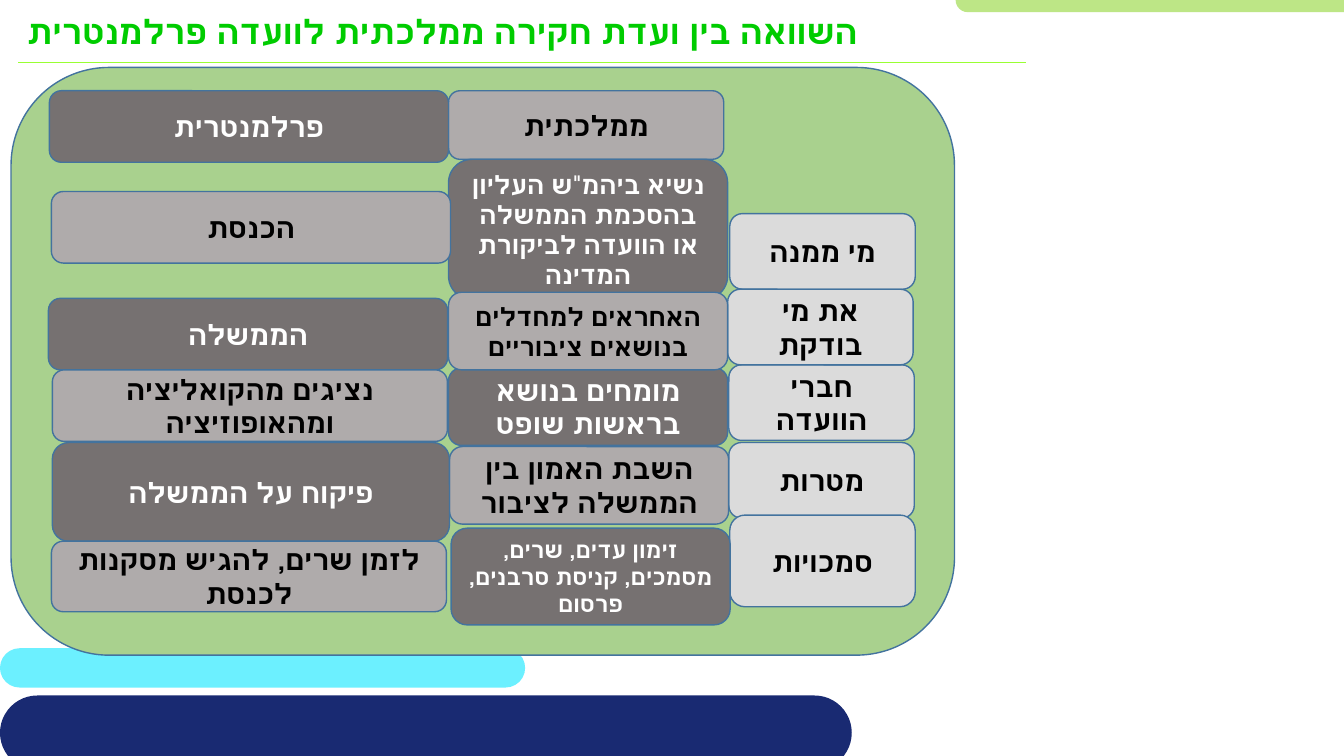
import dataclasses

import lxml.etree
import pptx
import pptx.dml.color
import pptx.enum.shapes
import pptx.enum.text
import pptx.oxml.ns
import pptx.util

Pt = pptx.util.Pt


@dataclasses.dataclass(frozen=True)
class Theme:
    font: str = "TeX Gyre Adventor"
    title: str = "00CC00"
    rule: str = "99FF33"
    panel: str = "A9D18E"
    outline: str = "43739E"
    cyan: str = "6CF0FF"
    lime: str = "BDE686"
    navy: str = "192A72"
    topic: str = "DBDBDB"
    light: str = "AFABAB"
    dark: str = "767171"
    black: str = "000000"
    white: str = "FFFFFF"
    title_size: int = 24
    large: int = 20
    medium: int = 18
    small: int = 16


THEME = Theme()

TOPICS = [
    (521.3, 152.6, 54, "מי ממנה"),
    (520.6, 260.6, 54, "חברי הוועדה"),
    (520.6, 316.1, 54, "מטרות"),
    (521.3, 367.9, 65.5, "סמכויות"),
    (519.8, 206.6, 54, "את מי בודקת"),
]

STATE_COMMISSION = [
    (320.4, 64.8, 196.6, 49, THEME.light, THEME.large, "ממלכתית"),
    (320.4, 113.8, 199.4, 100, THEME.dark, THEME.medium,
     "נשיא ביהמ\"ש העליון בהסכמת הממשלה או הוועדה לביקורת המדינה"),
    (320.4, 262.8, 199.4, 55.4, THEME.dark, THEME.large, "מומחים בנושא בראשות שופט"),
    (320.4, 208.8, 199.4, 55.4, THEME.light, THEME.medium, "האחראים למחדלים בנושאים ציבוריים"),
    (322.2, 377.3, 199.4, 69.1, THEME.dark, THEME.small,
     "זימון עדים, שרים, מסמכים, קניסת סרבנים, פרסום"),
    (321.1, 319, 199.4, 55.4, THEME.light, THEME.large, "השבת האמון בין הממשלה לציבור"),
]

PARLIAMENTARY = [
    (35.3, 64.8, 285.1, 51.1, THEME.dark, "פרלמנטרית"),
    (36.7, 136.8, 285.1, 51.1, THEME.light, "הכנסת"),
    (34.6, 213.1, 285.1, 51.1, THEME.dark, "הממשלה"),
    (37.4, 264.2, 282.2, 51.1, THEME.light, "נציגים מהקואליציה ומהאופוזיציה"),
    (37.4, 316.1, 283.7, 70.6, THEME.dark, "פיקוח על הממשלה"),
    (36.7, 386.6, 282.2, 50.4, THEME.light, "לזמן שרים, להגיש מסקנות לכנסת"),
]


def rgb(value):
    return pptx.dml.color.RGBColor.from_string(value)


def write_hebrew(text_frame, text, size, color):
    text_frame.word_wrap = True
    paragraph = text_frame.paragraphs[0]
    paragraph.text = text
    font = paragraph.font
    font.name = THEME.font
    font.size = Pt(size)
    font.bold = True
    font.color.rgb = rgb(color)
    properties = paragraph._p.get_or_add_pPr()
    properties.set("rtl", "1")
    defaults = properties.find(pptx.oxml.ns.qn("a:defRPr"))
    lxml.etree.SubElement(defaults, pptx.oxml.ns.qn("a:cs"), typeface=THEME.font)
    return paragraph


def add_rounded(slide, left, top, width, height, fill, outline=None):
    shape = slide.shapes.add_shape(
        pptx.enum.shapes.MSO_SHAPE.ROUNDED_RECTANGLE,
        Pt(left), Pt(top), Pt(width), Pt(height))
    shape.shadow.inherit = False
    shape.fill.solid()
    shape.fill.fore_color.rgb = rgb(fill)
    if outline:
        shape.line.color.rgb = rgb(outline)
        shape.line.width = Pt(1)
    else:
        shape.line.fill.background()
    return shape


def add_pill(slide, left, top, width, height, fill):
    add_rounded(slide, left, top, width, height, fill).adjustments[0] = 0.5


def add_card(slide, left, top, width, height, fill, size, text):
    shape = add_rounded(slide, left, top, width, height, fill, THEME.outline)
    color = THEME.white if fill == THEME.dark else THEME.black
    paragraph = write_hebrew(shape.text_frame, text, size, color)
    paragraph.alignment = pptx.enum.text.PP_ALIGN.CENTER
    shape.text_frame.vertical_anchor = pptx.enum.text.MSO_ANCHOR.MIDDLE


def add_rule(slide, left, right, top):
    line = slide.shapes.add_connector(
        pptx.enum.shapes.MSO_CONNECTOR.STRAIGHT, Pt(left), Pt(top), Pt(right), Pt(top))
    line.line.color.rgb = rgb(THEME.rule)
    line.line.width = Pt(0.5)
    lxml.etree.SubElement(line._element.spPr, pptx.oxml.ns.qn("a:effectLst"))


def add_title(slide, text):
    box = slide.shapes.add_textbox(Pt(12.2), Pt(4), Pt(676.8), Pt(40))
    write_hebrew(box.text_frame, text, THEME.title_size, THEME.title)


def main():
    presentation = pptx.Presentation()
    presentation.slide_width = Pt(960)
    presentation.slide_height = Pt(540)
    slide = presentation.slides.add_slide(presentation.slide_layouts[6])

    add_pill(slide, 0, 463, 375.1, 28.1, THEME.cyan)
    add_pill(slide, 682.6, -8.6, 417.6, 17.3, THEME.lime)
    add_pill(slide, 0, 496.8, 608.4, 53.3, THEME.navy)
    add_rounded(slide, 7.9, 48.2, 673.9, 419.8, THEME.panel, THEME.outline)
    add_rule(slide, 13, 733, 44.6)
    add_title(slide, "השוואה בין ועדת חקירה ממלכתית לוועדה פרלמנטרית")

    for left, top, height, text in TOPICS:
        add_card(slide, left, top, 132.5, height, THEME.topic, THEME.large, text)
    for card in STATE_COMMISSION:
        add_card(slide, *card)
    for left, top, width, height, fill, text in PARLIAMENTARY:
        add_card(slide, left, top, width, height, fill, THEME.large, text)

    presentation.save("out.pptx")


if __name__ == "__main__":
    main()
